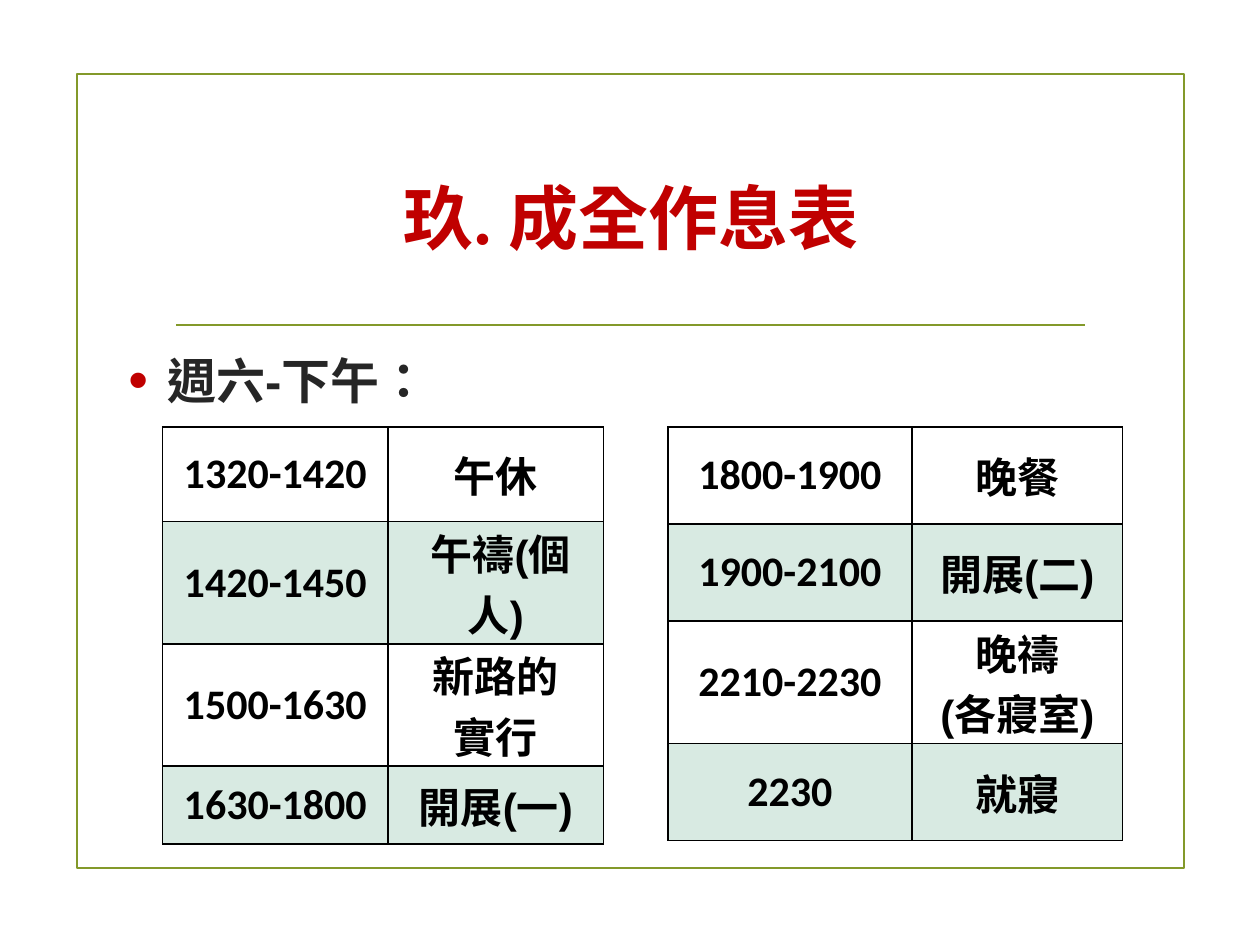
import dataclasses

import lxml.etree
import pptx
import pptx.dml.color
import pptx.enum.shapes
import pptx.enum.text
import pptx.oxml
import pptx.oxml.ns
import pptx.util

Inches = pptx.util.Inches
Pt = pptx.util.Pt
qn = pptx.oxml.ns.qn
ALIGN = pptx.enum.text.PP_ALIGN
ANCHOR = pptx.enum.text.MSO_ANCHOR


@dataclasses.dataclass(frozen=True)
class Theme:
    frame: str = "83992A"
    accent: str = "C00000"
    body: str = "262626"
    ink: str = "000000"
    band: str = "3C9770"
    band_alpha: int = 20
    title_font: str = "Times New Roman"
    text_font: str = "Arial"
    time_font: str = "Calibri"
    language: str = "zh-TW"
    title_size: int = 40
    body_size: int = 28
    cell_size: int = 24
    frame_width: float = 1.25
    border_width: float = 1


class SlideBuilder:
    def __init__(self, slide, theme):
        self.s = slide
        self.theme = theme

    def rgb(self, color):
        return pptx.dml.color.RGBColor.from_string(color)

    def style_runs(self, p, font, size, color):
        for r in p.runs:
            r.font.name = font
            r.font.size = Pt(size)
            r.font.bold = True
            r.font.color.rgb = self.rgb(color)
            r._r.get_or_add_rPr().set("lang", self.theme.language)

    def style_line(self, line):
        line.color.rgb = self.rgb(self.theme.frame)
        line.width = Pt(self.theme.frame_width)

    def frame(self, x, y, w, h):
        sp = self.s.shapes.add_shape(
            pptx.enum.shapes.MSO_SHAPE.RECTANGLE,
            Inches(x), Inches(y), Inches(w), Inches(h))
        sp.shadow.inherit = False
        sp.fill.background()
        self.style_line(sp.line)

    def rule(self, x1, x2, y):
        cxn = self.s.shapes.add_connector(
            pptx.enum.shapes.MSO_CONNECTOR.STRAIGHT,
            Inches(x1), Inches(y), Inches(x2), Inches(y))
        self.style_line(cxn.line)
        lxml.etree.SubElement(cxn._element.spPr, qn("a:effectLst"))

    def text(self, x, y, w, h, text, font, size, color,
             align=ALIGN.LEFT, anchor=ANCHOR.TOP):
        sp = self.s.shapes.add_textbox(Inches(x), Inches(y), Inches(w), Inches(h))
        tf = sp.text_frame
        tf.word_wrap = True
        tf.vertical_anchor = anchor
        tf.text = text
        p = tf.paragraphs[0]
        p.alignment = align
        self.style_runs(p, font, size, color)
        return p

    def bullet(self, x, y, w, h, text):
        t = self.theme
        p = self.text(x, y, w, h, text, t.text_font, t.body_size, t.body)
        p.space_after = Pt(6)
        pPr = p._p.get_or_add_pPr()
        indent = Inches(0.31)
        pPr.set("marL", str(indent))
        pPr.set("indent", str(-indent))
        color = lxml.etree.SubElement(pPr, qn("a:buClr"))
        lxml.etree.SubElement(color, qn("a:srgbClr"), val=t.accent)
        lxml.etree.SubElement(pPr, qn("a:buSzPct"), val="115000")
        lxml.etree.SubElement(pPr, qn("a:buFont"), typeface=t.text_font)
        lxml.etree.SubElement(pPr, qn("a:buChar"), char="•")

    def borders(self, cell):
        tcPr = cell._tc.get_or_add_tcPr()
        for side in ("a:lnL", "a:lnR", "a:lnT", "a:lnB"):
            ln = lxml.etree.SubElement(
                tcPr, qn(side), w=str(Pt(self.theme.border_width)))
            fill = lxml.etree.SubElement(ln, qn("a:solidFill"))
            lxml.etree.SubElement(fill, qn("a:srgbClr"), val=self.theme.ink)

    def fill_cell(self, cell, banded):
        if not banded:
            cell.fill.background()
            return
        cell.fill.solid()
        cell.fill.fore_color.rgb = self.rgb(self.theme.band)
        color = cell._tc.tcPr.find(qn("a:solidFill")).find(qn("a:srgbClr"))
        lxml.etree.SubElement(
            color, qn("a:alpha"), val=str(self.theme.band_alpha * 1000))

    def schedule(self, x, y, widths, heights, entries):
        t = self.theme
        table = self.s.shapes.add_table(
            len(entries), len(widths), Inches(x), Inches(y),
            Inches(sum(widths)), Inches(sum(heights))).table
        table.first_row = False
        table.horz_banding = False
        for column, width in zip(table.columns, widths):
            column.width = Inches(width)
        for i, (height, entry) in enumerate(zip(heights, entries)):
            table.rows[i].height = Inches(height)
            for j, (text, font) in enumerate(zip(entry, (t.time_font, t.text_font))):
                cell = table.cell(i, j)
                cell.margin_left = cell.margin_right = Inches(0.07)
                cell.margin_top = cell.margin_bottom = 0
                cell.vertical_anchor = ANCHOR.MIDDLE
                cell.text_frame.text = text
                for p in cell.text_frame.paragraphs:
                    p.alignment = ALIGN.CENTER
                    self.style_runs(p, font, t.cell_size, t.ink)
                self.borders(cell)
                self.fill_cell(cell, i % 2 == 1)


def main():
    prs = pptx.Presentation()
    prs.slide_width = Inches(10)
    prs.slide_height = Inches(7.5)
    theme = Theme()
    b = SlideBuilder(prs.slides.add_slide(prs.slide_layouts[6]), theme)

    b.frame(0.61, 0.59, 8.79, 6.3)
    b.rule(1.4, 8.61, 2.58)
    b.text(1.29, 1, 7.44, 1.43, "玖. 成全作息表", theme.title_font,
           theme.title_size, theme.accent, ALIGN.CENTER, ANCHOR.MIDDLE)
    b.bullet(0.92, 2.73, 4.21, 0.66, "週六-下午：")

    two_lines = 0.97
    b.schedule(1.29, 3.39, (1.79, 1.71), (0.75, two_lines, two_lines, 0.62), (
        ("1320-1420", "午休"),
        ("1420-1450", " 午禱(個人)"),
        ("1500-1630", "新路的\v實行"),
        ("1630-1800", "開展(一)"),
    ))
    b.schedule(5.3, 3.39, (1.94, 1.67), (0.77, 0.77, two_lines, 0.77), (
        ("1800-1900", "晚餐"),
        ("1900-2100", "開展(二)"),
        ("2210-2230", "晚禱\n(各寢室)"),
        ("2230", "就寢"),
    ))
    prs.save("out.pptx")


if __name__ == "__main__":
    main()
